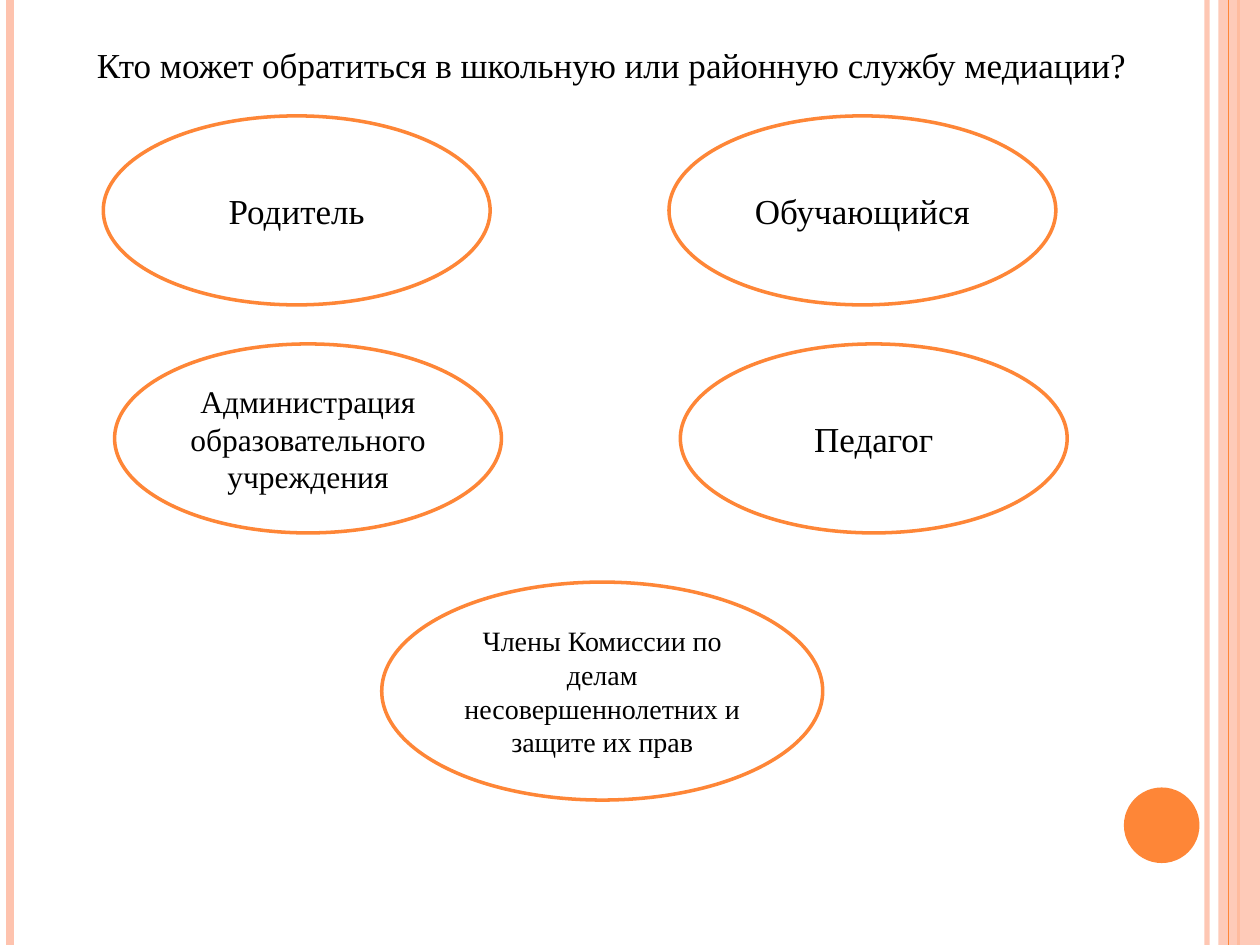
"""Build a slide showing who may turn to a school mediation service."""
from lxml import etree
from pptx import Presentation
from pptx.dml.color import RGBColor
from pptx.enum.shapes import MSO_CONNECTOR, MSO_SHAPE
from pptx.enum.text import MSO_ANCHOR, PP_ALIGN
from pptx.oxml.ns import qn
from pptx.util import Inches, Pt

STRAIGHT = MSO_CONNECTOR.STRAIGHT
OVAL, RECTANGLE = MSO_SHAPE.OVAL, MSO_SHAPE.RECTANGLE
MIDDLE = MSO_ANCHOR.MIDDLE
CENTER, JUSTIFY = PP_ALIGN.CENTER, PP_ALIGN.JUSTIFY

ORANGE = RGBColor(0xFE, 0x86, 0x37)
PEACH = RGBColor(0xFE, 0xC3, 0xAE)
WHITE = RGBColor(0xFF, 0xFF, 0xFF)
BLACK = RGBColor(0, 0, 0)

WIDTH, HEIGHT = 10, 7.5
GRID_LEFT, GRID_TOP = 0.82, 0.92
COLUMN_STEP, ROW_STEP, ROW_SHIFT = 4.49, 1.81, 0.09
APPLICANT_SIZE = (3.07, 1.5)
COMMISSION_BOX = (3.03, 4.62, 3.5, 1.73)

TITLE = "Кто может обратиться в школьную или районную службу медиации?"
APPLICANTS = [
    ("Родитель", 0, 0, 20),
    ("Обучающийся", 1, 0, 20),
    ("Педагог", 1, 1, 20),
    ("Администрация образовательного учреждения", 0, 1, 18),
]
COMMISSION = "Члены Комиссии по делам несовершеннолетних и защите их прав"


def set_opacity(element, percent):
    """Make the explicit colours of an element partly transparent."""
    for color in element.iter(qn("a:srgbClr")):
        etree.SubElement(color, qn("a:alpha")).set("val", str(percent * 1000))


def write_text(frame, text, size, align):
    """Fill a text frame with one formatted paragraph."""
    frame.word_wrap = True
    paragraph = frame.paragraphs[0]
    paragraph.alignment = align
    run = paragraph.add_run()
    run.text = text
    for name, value in {"name": "Times New Roman", "size": Pt(size)}.items():
        setattr(run.font, name, value)
    run.font.color.rgb = BLACK
    return paragraph


def add_stripe(slide, x, color, weight, opacity=100):
    """Draw a vertical line over the full height of the slide."""
    stripe = slide.shapes.add_connector(
        STRAIGHT, Inches(x), 0, Inches(x), Inches(HEIGHT))
    stripe.line.color.rgb = color
    stripe.line.width = Pt(weight)
    etree.SubElement(stripe._element.spPr, qn("a:effectLst"))
    if opacity < 100:
        set_opacity(stripe._element, opacity)


def add_filled(slide, kind, box, color):
    """Draw a flat preset shape without an outline."""
    shape = slide.shapes.add_shape(kind, *map(Inches, box))
    shape.shadow.inherit = False
    shape.fill.solid()
    shape.fill.fore_color.rgb = color
    shape.line.fill.background()
    return shape


def add_bubble(slide, box, text, size):
    """Draw an outlined ellipse holding centred text."""
    bubble = add_filled(slide, OVAL, box, WHITE)
    bubble.line.color.rgb = ORANGE
    bubble.line.width = Pt(2)
    bubble.text_frame.vertical_anchor = MIDDLE
    write_text(bubble.text_frame, text, size, CENTER)


def add_decoration(slide):
    """Draw the border stripes, the side band and the corner dot."""
    add_stripe(slide, 9.58, PEACH, 3, 93)
    add_stripe(slide, 0.08, PEACH, 4.5)
    add_stripe(slide, 9.83, ORANGE, 1.5)
    band = add_filled(slide, RECTANGLE, (9.67, 0, WIDTH - 9.67, HEIGHT), PEACH)
    set_opacity(band._element, 87)
    add_stripe(slide, 9.75, ORANGE, 0.75)
    add_filled(slide, OVAL, (8.92, 6.25, 0.6, 0.6), ORANGE)


def add_title(slide):
    """Write the question at the top of the slide."""
    title = slide.shapes.add_textbox(*map(Inches, (0.67, 0.13, 8.74, 0.61)))
    write_text(title.text_frame, TITLE, 20, JUSTIFY).line_spacing = 1.5


def main():
    """Assemble and save the slide."""
    deck = Presentation()
    deck.slide_width, deck.slide_height = Inches(WIDTH), Inches(HEIGHT)
    slide = deck.slides.add_slide(deck.slide_layouts[6])
    add_decoration(slide)
    add_title(slide)
    for text, column, row, size in APPLICANTS:
        left = GRID_LEFT + column * COLUMN_STEP + row * ROW_SHIFT
        top = GRID_TOP + row * ROW_STEP
        add_bubble(slide, (left, top, *APPLICANT_SIZE), text, size)
    add_bubble(slide, COMMISSION_BOX, COMMISSION, 16)
    deck.save("out.pptx")


if __name__ == "__main__":
    main()
